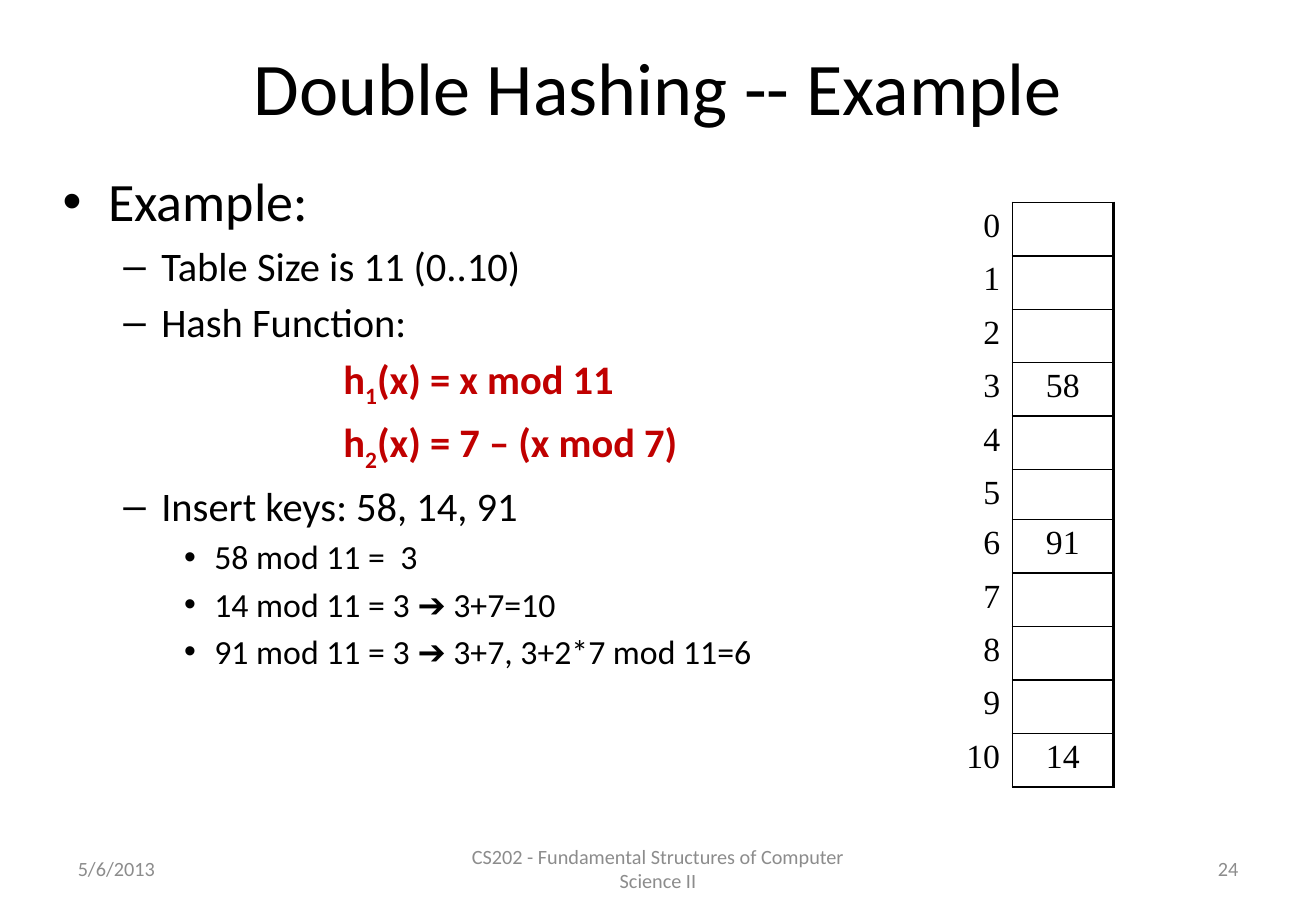
from dataclasses import dataclass

from lxml import etree
from pptx import Presentation
from pptx import util as u
from pptx.dml.color import RGBColor
from pptx.enum import text
from pptx.oxml import ns

# Grid: 130 columns by 90 rows, twelve units to the inch
COLS, ROWS = 130, 90
BLACK, RED, GRAY = "000000", "C00000", "8C8C8C"
SANS, SERIF = "Calibri", "Times New Roman"
LEFT, CENTER, RIGHT = text.PP_ALIGN.LEFT, text.PP_ALIGN.CENTER, text.PP_ALIGN.RIGHT


@dataclass
class Level:
    size: int
    margin: float
    hang: float
    bullet: str = ""
    color: str = BLACK
    bold: bool = False
    depth: int = 1


@dataclass
class Footer:
    words: str
    left: float
    width: float
    align: text.PP_ALIGN


TOP = Level(32, 4.5, 4.5, "•", depth=0)
SUB = Level(24, 9.75, 3.75, "–")
FORMULA = Level(24, 27.75, 0, color=RED, bold=True)
STEP = Level(20, 15, 3, "•", depth=2)

# Each line is a level and its runs; odd-numbered runs are subscripts
LINES = [
    (TOP, ["Example:"]),
    (SUB, ["Table Size is 11 (0..10)"]),
    (SUB, ["Hash Function:"]),
    (FORMULA, ["h", "1", "(x) = x mod 11"]),
    (FORMULA, ["h", "2", "(x) = 7 – (x mod 7)"]),
    (SUB, ["Insert keys: 58, 14, 91"]),
    (STEP, ["58 mod 11 =  3"]),
    (STEP, ["14 mod 11 = 3 ➔ 3+7=10"]),
    (STEP, ["91 mod 11 = 3 ➔ 3+7, 3+2*7 mod 11=6"]),
]
FOOTERS = [
    Footer("5/6/2013", 6.5, 30.4, LEFT),
    Footer("CS202 - Fundamental Structures of Computer Science II", 44.4, 41.2, CENTER),
    Footer("24", 93.1, 30.4, RIGHT),
]
TABLE_SIZE = 11
STORED = {3: "58", 6: "91", 10: "14"}
SLOT_ROW, SHORT_ROW, SHORT_SLOT = 5.28, 4.8, 5


def grid(units: float) -> int:
    return u.Inches(units / 12)


def rgb(color: str) -> RGBColor:
    return RGBColor.from_string(color)


def add_run(p, words: str, size: float, color: str = BLACK, font: str = SANS,
            bold: bool = False):
    r = p.add_run()
    r.text = words
    r.font.size, r.font.name, r.font.bold = u.Pt(size), font, bold
    r.font.color.rgb = rgb(color)
    return r


def add_box(s, left: float, top: float, width: float, height: float):
    tf = s.shapes.add_textbox(grid(left), grid(top), grid(width), grid(height)).text_frame
    tf.word_wrap = True
    return tf


def add_line(p, level: Level, runs: list[str]) -> None:
    p.level = level.depth
    p.space_before = u.Pt(level.size * 0.2)
    pPr = p._p.get_or_add_pPr()
    pPr.set("marL", str(grid(level.margin)))
    pPr.set("indent", str(-grid(level.hang)))
    if level.bullet:
        etree.SubElement(pPr, ns.qn("a:buFont"), typeface="Arial")
        etree.SubElement(pPr, ns.qn("a:buChar"), char=level.bullet)
    else:
        etree.SubElement(pPr, ns.qn("a:buNone"))
    for i, words in enumerate(runs):
        r = add_run(p, words, level.size, level.color, bold=level.bold)
        if i % 2:
            r._r.get_or_add_rPr().set("baseline", "-25000")


def set_borders(cell, widths: dict[str, float]) -> None:
    tcPr = cell._tc.get_or_add_tcPr()
    for i, (side, width) in enumerate(widths.items()):
        ln = etree.Element(ns.qn(f"a:ln{side}"), w=str(u.Pt(width)))
        fill = etree.SubElement(ln, ns.qn("a:solidFill"))
        etree.SubElement(fill, ns.qn("a:srgbClr"), val=BLACK)
        tcPr.insert(i, ln)


def fill_cell(cell, words: str, align: text.PP_ALIGN, widths: dict[str, float]) -> None:
    cell.fill.background()
    cell.margin_top = cell.margin_bottom = u.Inches(0.04)
    p = cell.text_frame.paragraphs[0]
    p.alignment = align
    if words:
        add_run(p, words, 20, font=SERIF)
    set_borders(cell, widths)


def add_hash_table(s) -> None:
    height = SLOT_ROW * (TABLE_SIZE - 1) + SHORT_ROW
    table = s.shapes.add_table(TABLE_SIZE, 2, grid(93), grid(20), grid(17), grid(height)).table
    table.first_row = table.horz_banding = False
    for column, width in zip(table.columns, (7, 10)):
        column.width = grid(width)
    for slot in range(TABLE_SIZE):
        table.rows[slot].height = grid(SHORT_ROW if slot == SHORT_SLOT else SLOT_ROW)
        fill_cell(table.cell(slot, 0), str(slot), RIGHT, {"R": 1})
        fill_cell(table.cell(slot, 1), STORED.get(slot, ""), CENTER,
                  {"L": 1, "R": 2.25, "T": 1, "B": 1})


def main() -> None:
    prs = Presentation()
    prs.slide_width, prs.slide_height = grid(COLS), grid(ROWS)
    s = prs.slides.add_slide(prs.slide_layouts.get_by_name("Title Only"))

    # Title
    sp = s.shapes.title
    sp.left, sp.top, sp.width, sp.height = grid(6.5), grid(3), grid(117), grid(11)
    tf = sp.text_frame
    tf.vertical_anchor = text.MSO_ANCHOR.MIDDLE
    p = tf.paragraphs[0]
    p.alignment = CENTER
    add_run(p, "Double Hashing -- Example", 44)

    # Explanation
    tf = add_box(s, 5, 16, 81, 67)
    for i, (level, runs) in enumerate(LINES):
        add_line(tf.add_paragraph() if i else tf.paragraphs[0], level, runs)

    # Footer row
    for footer in FOOTERS:
        tf = add_box(s, footer.left, 83.4, footer.width, 4.8)
        tf.vertical_anchor = text.MSO_ANCHOR.MIDDLE
        p = tf.paragraphs[0]
        p.alignment = footer.align
        add_run(p, footer.words, 12, GRAY)

    # Hash table
    add_hash_table(s)
    prs.save("out.pptx")


if __name__ == "__main__":
    main()
